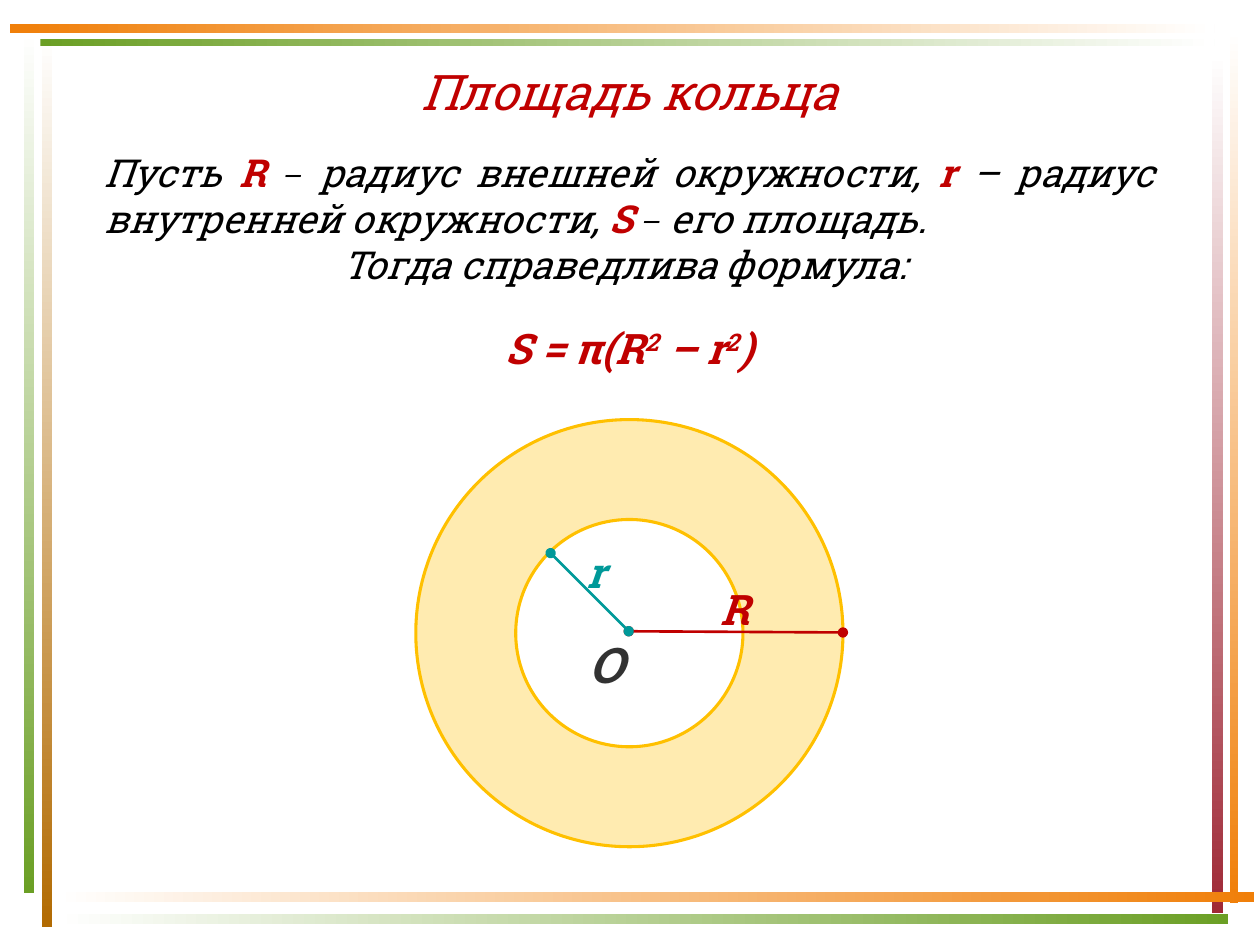
from lxml import etree
from pptx import Presentation
from pptx.dml.color import RGBColor
from pptx.enum.shapes import MSO_CONNECTOR, MSO_SHAPE
from pptx.enum.text import MSO_AUTO_SIZE, PP_ALIGN
from pptx.oxml.ns import qn
from pptx.util import Inches, Pt

RECTANGLE, DONUT = MSO_SHAPE.RECTANGLE, MSO_SHAPE.DONUT
STRAIGHT = MSO_CONNECTOR.STRAIGHT
LEFT, CENTER, JUSTIFY = PP_ALIGN.LEFT, PP_ALIGN.CENTER, PP_ALIGN.JUSTIFY
FIT_TEXT, FIXED = MSO_AUTO_SIZE.SHAPE_TO_FIT_TEXT, MSO_AUTO_SIZE.NONE

COLORS = {
    "white": "FFFFFF", "black": "000000", "gray": "323232",
    "red": "C00000", "teal": "009999", "gold": "FFC000",
    "brown": "B26B02", "green": "6B9F25", "orange": "F07F09", "wine": "9F2936",
}
BODY = {"name": "Roboto Slab", "size": Pt(22), "italic": True, "bold": False}
TITLE = {**BODY, "size": Pt(28)}
SYMBOL = {**BODY, "bold": True}
DASH = {**BODY, "name": "Cambria"}
FORMULA = {**SYMBOL, "size": Pt(24)}
CENTER_NAME = {**SYMBOL, "size": Pt(28)}


def rgb(color):
    return RGBColor.from_string(COLORS[color])


class RingSlide:
    """Hold the text style and the slide that receives each element."""

    def __init__(self, slide):
        self.slide = slide

    def bar(self, box, start, end, angle):
        bar = self.slide.shapes.add_shape(RECTANGLE, *map(Inches, box))
        bar.shadow.inherit = False
        bar.line.fill.background()
        bar.fill.gradient()
        bar.fill.gradient_angle = angle
        for stop, color in zip(bar.fill.gradient_stops, (start, end)):
            stop.color.rgb = rgb(color)

    def ring(self, box, thickness, color, opacity):
        ring = self.slide.shapes.add_shape(DONUT, *map(Inches, box))
        ring.shadow.inherit = False
        ring.adjustments[0] = thickness
        ring.fill.solid()
        ring.fill.fore_color.rgb = rgb(color)
        tint = ring._element.spPr.find(qn("a:solidFill")).find(qn("a:srgbClr"))
        etree.SubElement(tint, qn("a:alpha")).set("val", str(opacity * 1000))
        ring.line.color.rgb = rgb(color)
        ring.line.width = Pt(1.75)

    def radius(self, start, end, color):
        radius = self.slide.shapes.add_connector(
            STRAIGHT, *map(Inches, (*start, *end)))
        radius.line.color.rgb = rgb(color)
        radius.line.width = Pt(1.5)
        outline = radius.line._get_or_add_ln()
        for tip in ("a:headEnd", "a:tailEnd"):
            etree.SubElement(outline, qn(tip)).set("type", "oval")
        etree.SubElement(radius._element.spPr, qn("a:effectLst"))

    def text(self, box, paragraphs, wrap=True, fit=FIT_TEXT):
        frame = self.slide.shapes.add_textbox(*map(Inches, box)).text_frame
        frame.word_wrap = wrap
        frame.auto_size = fit
        for index, (alignment, pieces) in enumerate(paragraphs):
            paragraph = frame.add_paragraph() if index else frame.paragraphs[0]
            paragraph.alignment = alignment
            for wording, style, color, *raised in pieces:
                run = paragraph.add_run()
                run.text = wording
                for attribute, value in style.items():
                    setattr(run.font, attribute, value)
                run.font.color.rgb = rgb(color)
                if raised:
                    run._r.get_or_add_rPr().set("baseline", "30000")


def main():
    deck = Presentation()
    deck.slide_width, deck.slide_height = Inches(10), Inches(7.5)
    page = RingSlide(deck.slides.add_slide(deck.slide_layouts[6]))

    for box, color in (
        ((0.33, 0.28, 0.08, 7.08), "brown"),
        ((0.19, 0.25, 0.08, 6.84), "green"),
        ((9.76, 0.24, 0.07, 6.93), "orange"),
        ((9.62, 0.42, 0.09, 6.83), "wine"),
    ):
        page.bar(box, "white", color, 270)
    for box, start, end in (
        ((0.45, 7.08, 9.5, 0.08), "white", "orange"),
        ((0.45, 7.25, 9.3, 0.08), "white", "green"),
        ((0.32, 0.31, 9.32, 0.06), "green", "white"),
        ((0.08, 0.19, 9.56, 0.07), "orange", "white"),
    ):
        page.bar(box, start, end, 0)

    page.text((4.57, 4.99, 0.5, 0.57),
              [(LEFT, [("О", CENTER_NAME, "gray")])], wrap=False)
    page.text((0.62, 0.44, 8.75, 0.62),
              [(CENTER, [("Площадь кольца", TITLE, "red")])], fit=FIXED)
    page.text((0.73, 1.13, 8.53, 1.21), [
        (JUSTIFY, [
            ("Пусть ", BODY, "black"),
            ("R ", SYMBOL, "red"),
            ("−", DASH, "black"),
            (" радиус внешней окружности, ", BODY, "black"),
            ("r ", SYMBOL, "red"),
            ("– радиус внутренней окружности, ", BODY, "black"),
            ("S ", SYMBOL, "red"),
            ("−", DASH, "black"),
            (" его площадь. ", BODY, "black"),
        ]),
        (CENTER, [("Тогда справедлива формула: ", BODY, "black")]),
    ])

    center = (4.99, 5.01)
    page.ring((3.3, 3.33, 3.39, 3.39), 0.234, "gold", 31)
    for name, box, end, color in (
        ("R", (5.62, 4.58, 0.5, 0.5), (6.69, 5.02), "red"),
        ("r", (4.56, 4.29, 0.43, 0.5), (4.37, 4.39), "teal"),
    ):
        page.text(box, [(LEFT, [(name, FORMULA, color)])])
        page.radius(center, end, color)

    page.text((3.79, 2.51, 2.41, 0.5), [(CENTER, [
        ("S = π(R", FORMULA, "red"),
        ("2", FORMULA, "red", True),
        (" – r", FORMULA, "red"),
        ("2", FORMULA, "red", True),
        (")", FORMULA, "red"),
    ])], wrap=False)

    deck.save("out.pptx")


if __name__ == "__main__":
    main()
